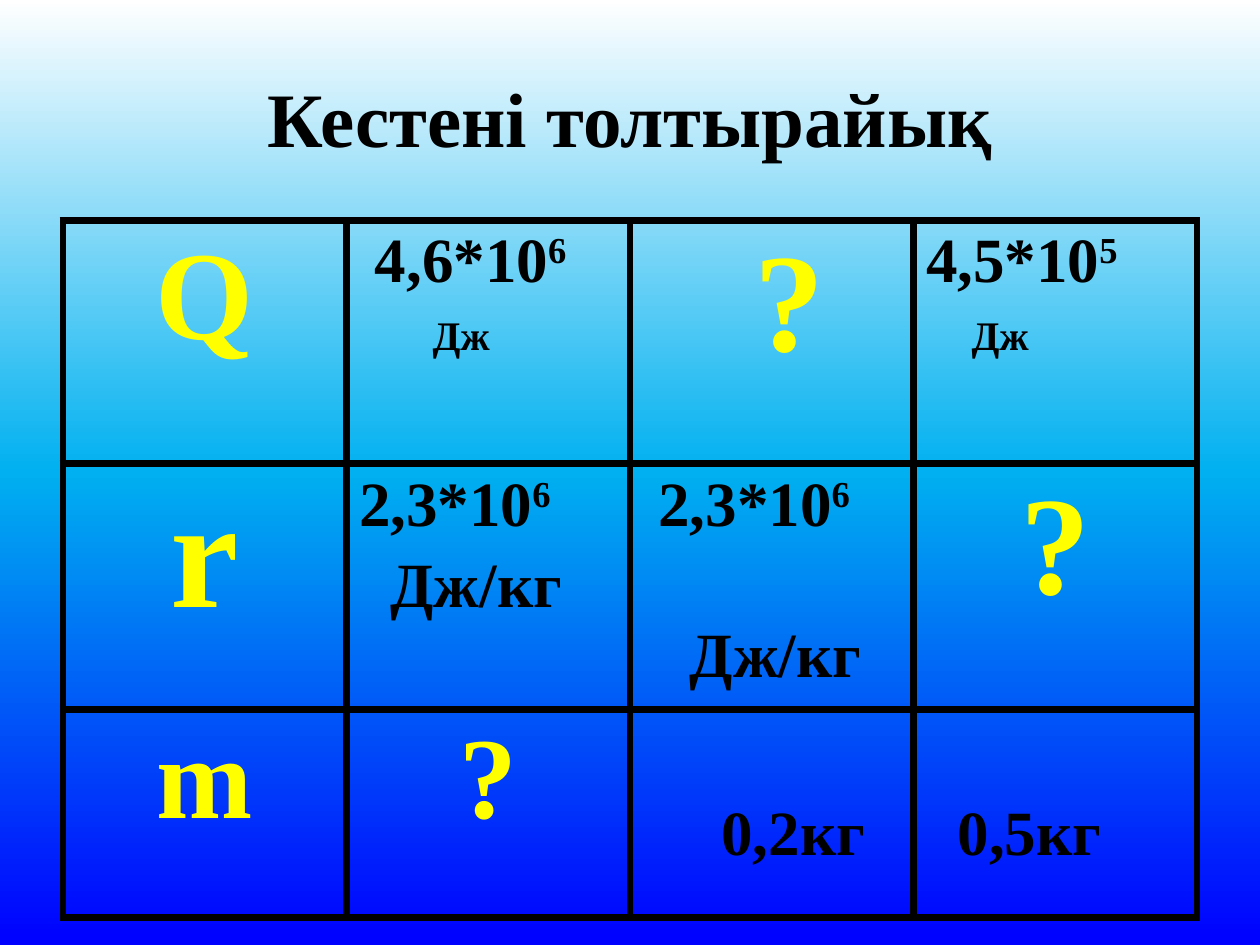
from copy import deepcopy

from lxml import etree
from pptx import Presentation
from pptx import util as u
from pptx.dml.color import RGBColor
from pptx.enum import text
from pptx.oxml.ns import qn

BLACK = RGBColor(0x00, 0x00, 0x00)
YELLOW = RGBColor(0xFF, 0xFF, 0x00)
WHITE = RGBColor(0xFF, 0xFF, 0xFF)
SKY = RGBColor(0x00, 0xB0, 0xF0)
BLUE = RGBColor(0x00, 0x00, 0xFF)

FONT = "Times New Roman"
W, H = u.Inches(10), u.Inches(7.5)
MARGIN = W // 20
ROW_HEIGHTS = (1.93, 1.86, 1.65)
BORDER = u.Pt(4.5)
RAISED = "30000"


def symbol(label, size, indent=0):
    """A large centred yellow sign."""
    return [dict(content=label, size=size, color=YELLOW, center=True, indent=indent)]


def quantity(number, power, unit, indents, **unit_format):
    """A number with a power of ten, and its unit on the next line."""
    return [dict(content=number, power=power, indent=indents[0]),
            dict(content=unit, indent=indents[1], **{"before": 7, **unit_format})]


def mass(label, indent):
    return [dict(content=label, indent=indent)]


JOULE = dict(size=40, raised=True)
CELLS = [
    [symbol("Q", 72),
     quantity("4,6*10", "6", "Дж", (9, 42), **JOULE),
     symbol("?", 80, indent=20),
     quantity("4,5*10", "5", "Дж", (0, 26), **JOULE)],
    [symbol("r", 88),
     quantity("2,3*10", "6", "Дж/кг", (0, 18)),
     quantity("2,3*10", "6", "Дж/кг", (9, 27), before=47),
     symbol("?", 80)],
    [symbol("m", 66),
     symbol("?", 66),
     mass("0,2кг", 45),
     mass("0,5кг", 18)],
]
LOW_MARGIN = u.Inches(0.71)


def write(p, content, size=36, color=BLACK, center=False, indent=0, before=0,
          power="", raised=False):
    """Fill a paragraph with bold text, with an optional raised power."""
    p.alignment = text.PP_ALIGN.CENTER if center else text.PP_ALIGN.LEFT
    p.space_before = u.Pt(before)
    pPr = p._p.get_or_add_pPr()
    pPr.set("marL", str(u.Pt(indent)))
    pPr.set("indent", "0")
    for part, up in ((content, raised), (power, True)):
        if not part:
            continue
        r = p.add_run()
        r.text = part
        r.font.name, r.font.size, r.font.bold = FONT, u.Pt(size), True
        r.font.color.rgb = color
        if up:
            r.font._element.set("baseline", RAISED)


def paint_background(s):
    """Vertical gradient from white through sky to blue."""
    fill = s.background.fill
    fill.gradient()
    fill.gradient_angle = 270
    stops = s.element.find(".//" + qn("a:gsLst"))
    stops.insert(1, deepcopy(stops[0]))
    for stop, color, position in zip(fill.gradient_stops, (WHITE, SKY, BLUE), (0, 0.5, 1)):
        stop.color.rgb = color
        stop.position = position


def add_title(s, content):
    tf = s.shapes.add_textbox(MARGIN, H * 0.04, W - 2 * MARGIN, H / 6).text_frame
    tf.word_wrap = True
    tf.vertical_anchor = text.MSO_ANCHOR.MIDDLE
    write(tf.paragraphs[0], content, size=44, center=True)


def add_borders(cell):
    tcPr = cell._tc.get_or_add_tcPr()
    for i, side in enumerate(("a:lnL", "a:lnR", "a:lnT", "a:lnB")):
        ln = etree.Element(qn(side), w=str(BORDER))
        fill = etree.SubElement(ln, qn("a:solidFill"))
        etree.SubElement(fill, qn("a:srgbClr"), val=str(BLACK))
        tcPr.insert(i, ln)


def fill_cell(cell, lines):
    cell.fill.background()
    add_borders(cell)
    tf = cell.text_frame
    for i, line in enumerate(lines):
        p = tf.add_paragraph() if i else tf.paragraphs[0]
        write(p, **line)


def add_grid(s):
    rows, cols = len(CELLS), len(CELLS[0])
    height = u.Inches(sum(ROW_HEIGHTS))
    table = s.shapes.add_table(rows, cols, MARGIN, u.Inches(1.75),
                               W - 2 * MARGIN, height).table
    table.first_row = table.horz_banding = False
    for i, row in enumerate(CELLS):
        table.rows[i].height = u.Inches(ROW_HEIGHTS[i])
        for j, lines in enumerate(row):
            fill_cell(table.cell(i, j), lines)
    # The known masses sit low in the last row
    for j in (2, 3):
        table.cell(rows - 1, j).margin_top = LOW_MARGIN


def main():
    prs = Presentation()
    prs.slide_width, prs.slide_height = W, H
    s = prs.slides.add_slide(prs.slide_layouts[6])
    paint_background(s)
    add_title(s, "Кестені толтырайық")
    add_grid(s)
    prs.save("out.pptx")


if __name__ == "__main__":
    main()
